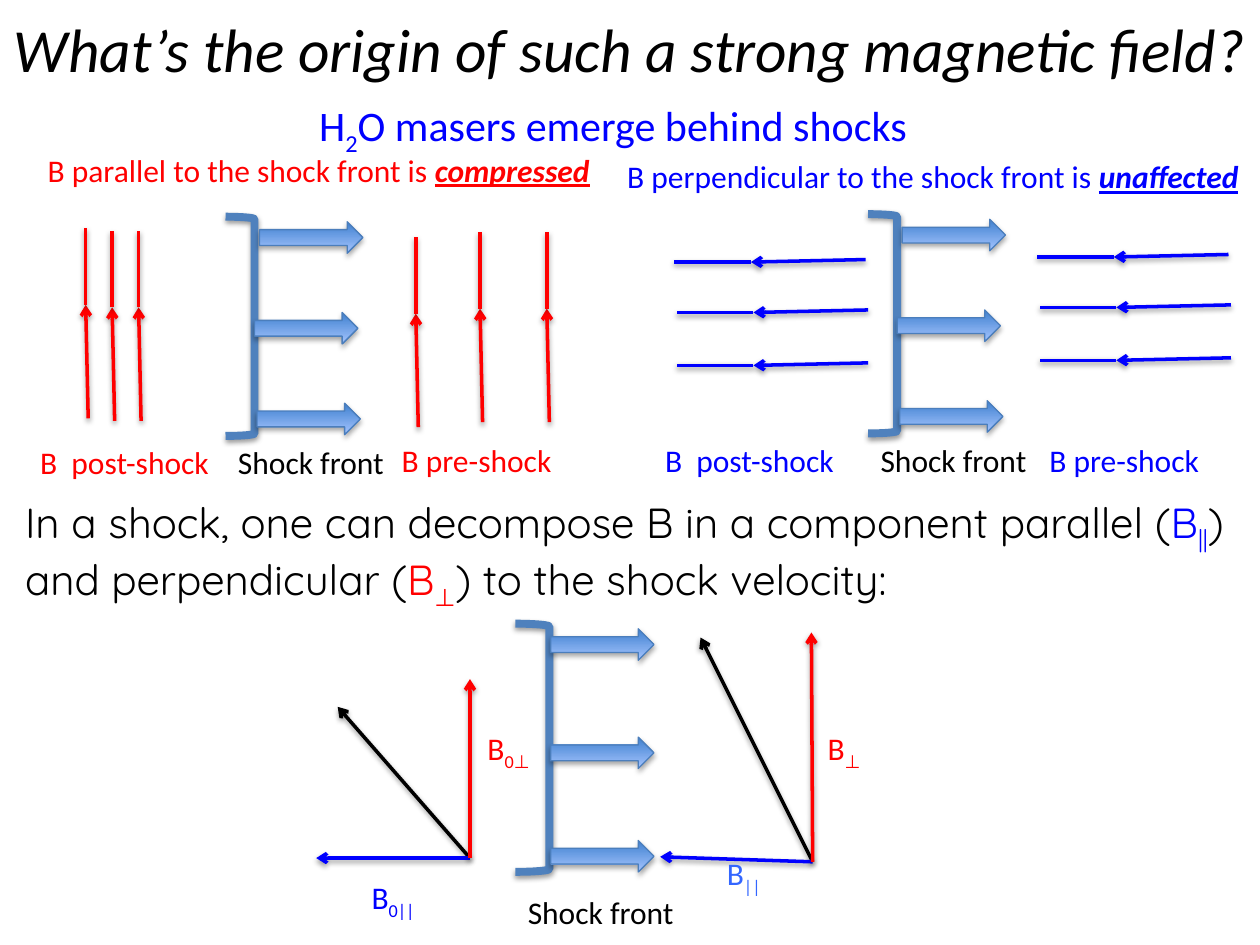
from dataclasses import dataclass

import pptx
import pptx.util
import pptx.dml.color
import pptx.enum.shapes
import pptx.enum.text
import pptx.oxml
import pptx.oxml.ns

Inches, Pt = pptx.util.Inches, pptx.util.Pt
MSO_SHAPE = pptx.enum.shapes.MSO_SHAPE
PP_ALIGN = pptx.enum.text.PP_ALIGN
qn = pptx.oxml.ns.qn


@dataclass(frozen=True)
class Theme:
    font: str = "Calibri"
    body_font: str = "Quicksand"
    black: str = "000000"
    red: str = "FF0000"
    blue: str = "0000FF"
    light_blue: str = "3366FF"
    bracket: str = "4F81BD"
    arrow_edge: str = "4B7EBC"
    arrow_dark: str = "3F80CE"
    arrow_light: str = "A4C4FF"
    title: float = 35
    body: float = 24
    label: float = 18
    line: float = 2
    bracket_line: float = 4.5
    edge: float = 0.75


T = Theme()


def rgb(color):
    return pptx.dml.color.RGBColor.from_string(color)


def place(sp, x, y, w, h):
    sp.left, sp.top, sp.width, sp.height = map(Inches, (x, y, w, h))


def add_shadow(sp, alpha=38, dist=1.6):
    """Give a shape or connector a soft shadow straight below it."""
    sp._element.spPr.append(pptx.oxml.parse_xml(
        '<a:effectLst xmlns:a="http://schemas.openxmlformats.org/drawingml/2006/main">'
        f'<a:outerShdw blurRad="{Pt(3.1)}" dist="{Pt(dist)}" dir="5400000" rotWithShape="0">'
        f'<a:srgbClr val="000000"><a:alpha val="{alpha * 1000}"/></a:srgbClr>'
        '</a:outerShdw></a:effectLst>'))


def write(tf, runs, color, size=T.label, font=T.font, align=PP_ALIGN.LEFT):
    """Fill one paragraph; each run is (text, style[, color]), style "", "sub" or "strong"."""
    p = tf.paragraphs[0]
    p.alignment = align
    p.space_before = Pt(0)
    p.font.name, p.font.size = font, Pt(size)
    for text, style, *own in runs:
        r = p.add_run()
        r.text = text
        r.font.color.rgb = rgb(own[0] if own else color)
        if style == "sub":
            r._r.get_or_add_rPr().set("baseline", "-25000")
        elif style == "strong":
            r.font.bold = r.font.italic = r.font.underline = True
    return p


def add_text(shapes, x, y, w, h, runs, color, wrap=True, **kw):
    tf = shapes.add_textbox(*map(Inches, (x, y, w, h))).text_frame
    tf.word_wrap = wrap
    tf.auto_size = pptx.enum.text.MSO_AUTO_SIZE.SHAPE_TO_FIT_TEXT
    write(tf, runs, color, **kw)


def add_line(shapes, start, end, color, arrow=True):
    c = shapes.add_connector(pptx.enum.shapes.MSO_CONNECTOR.STRAIGHT,
                             *map(Inches, (*start, *end)))
    c.line.color.rgb = rgb(color)
    c.line.width = Pt(T.line)
    if arrow:
        tail = pptx.oxml.parse_xml(
            '<a:tailEnd xmlns:a="http://schemas.openxmlformats.org/drawingml/2006/main"'
            ' type="arrow"/>')
        c._element.spPr.find(qn("a:ln")).append(tail)
    add_shadow(c)


def field_line(shapes, x, y, color, start, end):
    """Draw a line whose arrowhead sits at (x, y) partway along it."""
    add_line(shapes, (x + start[0], y + start[1]), (x, y), color)
    add_line(shapes, (x, y), (x + end[0], y + end[1]), color, arrow=False)


def shock_front(shapes, x, y, w, h, arrows, label_y):
    """Bracket in the given box, with block arrows and a label at offsets from it."""
    sp = shapes.add_shape(MSO_SHAPE.RIGHT_BRACKET, *map(Inches, (x, y, w, h)))
    sp.fill.background()
    sp.line.color.rgb = rgb(T.bracket)
    sp.line.width = Pt(T.bracket_line)
    add_shadow(sp)
    for dx, dy in arrows:
        sp = shapes.add_shape(MSO_SHAPE.LEFT_ARROW,
                              *map(Inches, (x + dx, y + dy, 0.82, 0.25)))
        sp.rotation = 180
        sp.fill.gradient()
        sp.fill.gradient_angle = 90
        for stop, color in zip(sp.fill.gradient_stops, (T.arrow_dark, T.arrow_light)):
            stop.color.rgb = rgb(color)
        sp.line.color.rgb = rgb(T.arrow_edge)
        sp.line.width = Pt(T.edge)
        add_shadow(sp, alpha=35, dist=1.8)
    add_text(shapes, x, y + label_y, 1.75, 0.4, [("Shock front", "")], T.black)


def shock_panel(s, x, y, w, color, heading, front, points, start, end, labels):
    """Field lines on both sides of a shock front, all at offsets from (x, y)."""
    shapes = s.shapes.add_group_shape().shapes
    for dx, dy in points:
        field_line(shapes, x + dx, y + dy, color, start, end)
    shock_front(shapes, x + front[0], y + front[1], 0.23, 1.74,
                [(0.27, 0.04), (0.23, 0.76), (0.25, 1.48)], 1.75)
    for text, (dx, dy) in zip(("B\u00a0 post-shock".replace("\u00a0", " "), "B pre-shock"), labels):
        add_text(shapes, x + dx, y + dy, 1.64, 0.4, [(text, "")], color)
    add_text(shapes, x, y, w, 0.4, heading, color)


def vectors(shapes, x, y, total, parallel, perpendicular):
    """Field vector and its two components from a common foot at (x, y)."""
    for (dx, dy), color in ((total, T.black), (parallel, T.blue), (perpendicular, T.red)):
        add_line(shapes, (x, y), (x + dx, y + dy), color)


def decomposition(s, x, y):
    shapes = s.shapes.add_group_shape().shapes
    vectors(shapes, x + 1.22, y + 1.86, (-1.05, -1.2), (-1.22, 0), (0, -1.42))
    shock_front(shapes, x + 1.58, y, 0.27, 1.97,
                [(0.28, 0.04), (0.28, 0.9), (0.28, 1.72)], 2.09)
    vectors(shapes, x + 3.94, y + 1.89, (-0.89, -1.78), (-1.21, -0.04), (-0.01, -1.82))
    for dx, dy, w, sub, color in ((1.26, 0.79, 0.59, "0⊥", T.red),
                                  (3.96, 0.79, 0.51, "⊥", T.red),
                                  (3.16, 1.78, 0.49, "||", T.light_blue),
                                  (0.34, 1.97, 0.58, "0||", T.blue)):
        add_text(shapes, x + dx, y + dy, w, 0.4, [("B", ""), (sub, "sub")], color, wrap=False)


def headings(s):
    title, subtitle = s.shapes.title, s.placeholders[1]
    place(title, 0, -0.42, 10, 1.61)
    title.text_frame.vertical_anchor = pptx.enum.text.MSO_ANCHOR.MIDDLE
    p = write(title.text_frame, [("What’s the origin of such a strong magnetic field?", "")],
              T.black, T.title, align=PP_ALIGN.CENTER)
    p.font.italic = True
    place(subtitle, 0.45, 0.74, 8.83, 0.5)
    write(subtitle.text_frame,
          [("H", ""), ("2", "sub"), ("O masers emerge behind shocks", "")],
          T.blue, T.body, align=PP_ALIGN.CENTER)


def main():
    prs = pptx.Presentation()
    prs.slide_width, prs.slide_height = Inches(10), Inches(7.5)
    s = prs.slides.add_slide(prs.slide_layouts[0])
    headings(s)
    shock_panel(
        s, 0.28, 1.15, 4.72, T.red,
        [("B parallel to the shock front is ", ""), ("compressed", "strong")],
        front=(1.51, 0.57),
        points=[(0.4, 1.27), (0.61, 1.29), (0.82, 1.29),
                (3.02, 1.34), (3.53, 1.3), (4.06, 1.3)],
        start=(0.02, 0.9), end=(0, -0.61), labels=[(-0.06, 2.32), (2.81, 2.3)])
    decomposition(s, 2.51, 4.95)
    pre_shock = [(3.96, 0.84), (3.98, 1.24), (3.98, 1.66)]
    shock_panel(
        s, 4.88, 1.2, 5.27, T.blue,
        [("B perpendicular to the shock front is ", ""), ("unaffected", "strong")],
        front=(2.01, 0.5),
        points=pre_shock + [(dx - 2.88, dy + 0.04) for dx, dy in pre_shock],
        start=(0.91, -0.02), end=(-0.61, 0), labels=[(0.3, 2.25), (3.35, 2.25)])
    add_text(s.shapes, 0.1, 3.89, 9.71, 0.91, [
        ("In a shock, one can decompose B in a component parallel (", ""),
        ("B", "", T.blue), ("||", "sub", T.blue),
        (") and perpendicular (", ""),
        ("B", "", T.red), ("⊥", "sub", T.red),
        (") to the shock velocity:", "")],
        T.black, size=T.body, font=T.body_font, align=PP_ALIGN.JUSTIFY)
    prs.save("out.pptx")


if __name__ == "__main__":
    main()
